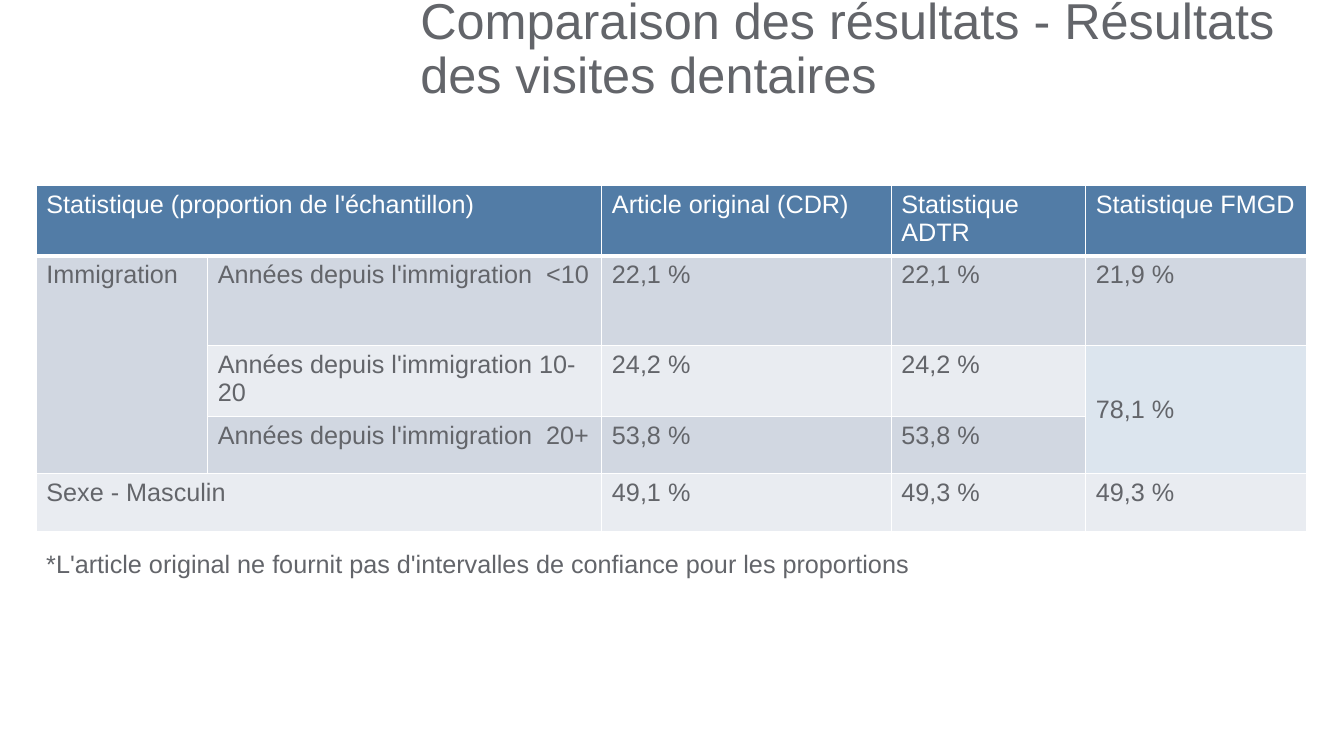
import lxml.etree
import pptx
import pptx.dml.color
import pptx.enum.text
import pptx.oxml.ns
import pptx.util

Inches, Pt = pptx.util.Inches, pptx.util.Pt
MIDDLE = pptx.enum.text.MSO_ANCHOR.MIDDLE

# Content
TITLE = "Comparaison des résultats - Résultats des visites dentaires"
NOTE = "*L'article original ne fournit pas d'intervalles de confiance pour les proportions"
ROWS = [
    ["Statistique (proportion de l'échantillon)", "", "Article original (CDR)",
     "Statistique ADTR", "Statistique FMGD"],
    ["Immigration", "Années depuis l'immigration  <10", "22,1 %", "22,1 %", "21,9 %"],
    ["", "Années depuis l'immigration 10-20", "24,2 %", "24,2 %", "78,1 %"],
    ["", "Années depuis l'immigration  20+", "53,8 %", "53,8 %", ""],
    ["Sexe - Masculin", "", "49,1 %", "49,3 %", "49,3 %"],
]
MERGES = [((0, 0), (0, 1)), ((1, 0), (3, 0)), ((2, 4), (3, 4)), ((4, 0), (4, 1))]
POOLED = (2, 4)
COLUMN_WIDTHS = [1.7, 3.91, 2.87, 1.93, 2.19]
ROW_HEIGHTS = [0.57, 0.89, 0.57, 0.57, 0.57]

THEME = {
    "font": "Arial", "title_size": 36, "body_size": 18,
    "text": "63656A", "light": "FFFFFF", "header": "527CA6",
    "bands": ["E9ECF1", "D1D7E1"], "pooled": "DCE5EE",
    "border": 1, "header_border": 3,
}


def color(value):
    return pptx.dml.color.RGBColor.from_string(value)


def style(para, size, value):
    para.font.name = THEME["font"]
    para.font.size = Pt(size)
    para.font.color.rgb = color(value)


def add_text(page, text, place, size):
    box = page.shapes.add_textbox(*map(Inches, place))
    box.text_frame.word_wrap = True
    para = box.text_frame.paragraphs[0]
    para.text = text
    style(para, size, THEME["text"])
    return box.text_frame


def add_borders(cell, bottom):
    properties = cell._tc.get_or_add_tcPr()
    qn = pptx.oxml.ns.qn
    for side in "LRTB":
        width = bottom if side == "B" else THEME["border"]
        line = lxml.etree.SubElement(properties, qn(f"a:ln{side}"), w=str(Pt(width)))
        fill = lxml.etree.SubElement(line, qn("a:solidFill"))
        lxml.etree.SubElement(fill, qn("a:srgbClr"), val=THEME["light"])


def cell_fill(row, column):
    if row == 0:
        return THEME["header"]
    if column == 0 and row < 4:
        return THEME["bands"][1]
    if (row, column) == POOLED:
        return THEME["pooled"]
    return THEME["bands"][row % 2]


deck = pptx.Presentation()
deck.slide_width, deck.slide_height = Inches(13.33), Inches(7.5)
page = deck.slides.add_slide(deck.slide_layouts[6])

# Title
title = add_text(page, TITLE, (4.07, 0.12, 8.87, 0.76), THEME["title_size"])
title.vertical_anchor = MIDDLE
title.paragraphs[0].line_spacing = 0.9

# Results table
table = page.shapes.add_table(
    len(ROWS), len(COLUMN_WIDTHS), Inches(0.36), Inches(1.84),
    Inches(sum(COLUMN_WIDTHS)), Inches(sum(ROW_HEIGHTS))).table
for column, width in zip(table.columns, COLUMN_WIDTHS):
    column.width = Inches(width)
for row, height in zip(table.rows, ROW_HEIGHTS):
    row.height = Inches(height)
for row, texts in enumerate(ROWS):
    for column, text in enumerate(texts):
        cell = table.cell(row, column)
        cell.text = text
        style(cell.text_frame.paragraphs[0], THEME["body_size"],
              THEME["text"] if row else THEME["light"])
        add_borders(cell, THEME["border"] if row else THEME["header_border"])
        cell.fill.solid()
        cell.fill.fore_color.rgb = color(cell_fill(row, column))
for first, last in MERGES:
    table.cell(*first).merge(table.cell(*last))
table.cell(*POOLED).vertical_anchor = MIDDLE

# Footnote
note = add_text(page, NOTE, (0.36, 5.39, 8.79, 0.4), THEME["body_size"])
note.auto_size = pptx.enum.text.MSO_AUTO_SIZE.SHAPE_TO_FIT_TEXT

deck.save("out.pptx")
